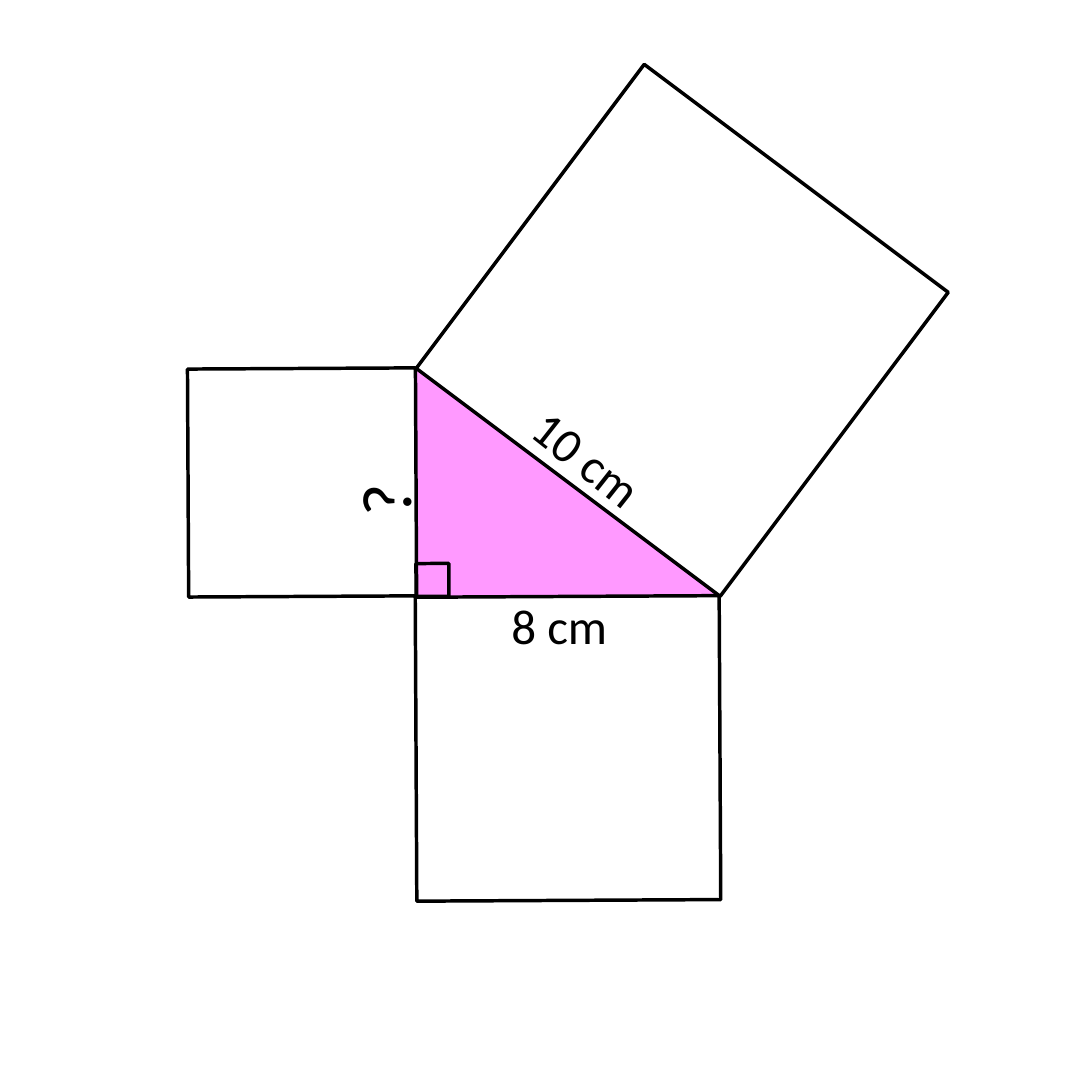
import math

import pptx
import pptx.dml.color
import pptx.enum.shapes
import pptx.enum.text
import pptx.util

Pt = pptx.util.Pt
SHAPES = pptx.enum.shapes.MSO_SHAPE
BLACK = pptx.dml.color.RGBColor(0x00, 0x00, 0x00)
PINK = pptx.dml.color.RGBColor(0xFF, 0x99, 0xFF)
PAGE = 311.76
CM = 10.85  # drawn length of one centimetre of the triangle


class Diagram:
    def __init__(self, slide, font="Calibri", stroke=1):
        self.slide = slide
        self.font = font
        self.stroke = stroke

    def figure(self, preset, center, width, height, rotation=0, fill=None, line=BLACK):
        """Place a preset shape by its centre."""
        x, y = center
        shape = self.slide.shapes.add_shape(
            preset, Pt(x - width / 2), Pt(y - height / 2), Pt(width), Pt(height))
        shape.shadow.inherit = False
        shape.rotation = rotation
        if fill is None:
            shape.fill.background()
        else:
            shape.fill.solid()
            shape.fill.fore_color.rgb = fill
        if line is None:
            shape.line.fill.background()
        else:
            shape.line.color.rgb = line
            shape.line.width = Pt(self.stroke)

    def square(self, center, side, rotation):
        self.figure(SHAPES.RECTANGLE, center, side, side, rotation)

    def label(self, text, center, width, height, size=14, rotation=0):
        x, y = center
        box = self.slide.shapes.add_textbox(
            Pt(x - width / 2), Pt(y - height / 2), Pt(width), Pt(height))
        box.rotation = rotation
        box.text_frame.word_wrap = False
        box.text_frame.auto_size = pptx.enum.text.MSO_AUTO_SIZE.SHAPE_TO_FIT_TEXT
        run = box.text_frame.paragraphs[0].add_run()
        run.text = text
        run.font.name = self.font
        run.font.size = Pt(size)
        run.font.color.rgb = BLACK


def main():
    deck = pptx.Presentation()
    deck.slide_width = deck.slide_height = Pt(PAGE)
    diagram = Diagram(deck.slides.add_slide(deck.slide_layouts[6]))

    corner_x, corner_y = 118.8, 170.3
    upright, base = 6 * CM, 8 * CM
    hypotenuse = math.hypot(upright, base)
    tilt = -0.3
    slope = math.degrees(math.atan2(upright, base))
    middle = (corner_x + base / 2, corner_y - upright / 2)

    diagram.figure(SHAPES.RIGHT_TRIANGLE, middle, base, upright, fill=PINK, line=None)
    diagram.square((corner_x - upright / 2, corner_y - upright / 2), upright, tilt)
    diagram.square((middle[0] + upright / 2, middle[1] - base / 2), hypotenuse, slope)
    diagram.square((corner_x + base / 2, corner_y + base / 2), base, tilt)
    right_angle = 9.4
    diagram.square((corner_x + right_angle / 2, corner_y - right_angle / 2),
                   right_angle, tilt)

    diagram.label("8 cm", (159.8, 178.6), 41.8, 24.5)
    diagram.label("10 cm", (167.8, 131), 49, 24.5, rotation=38.3)
    diagram.label("?", (109.8, 142.6), 23.8, 31.7, size=20, rotation=270)

    deck.save("out.pptx")


if __name__ == "__main__":
    main()
